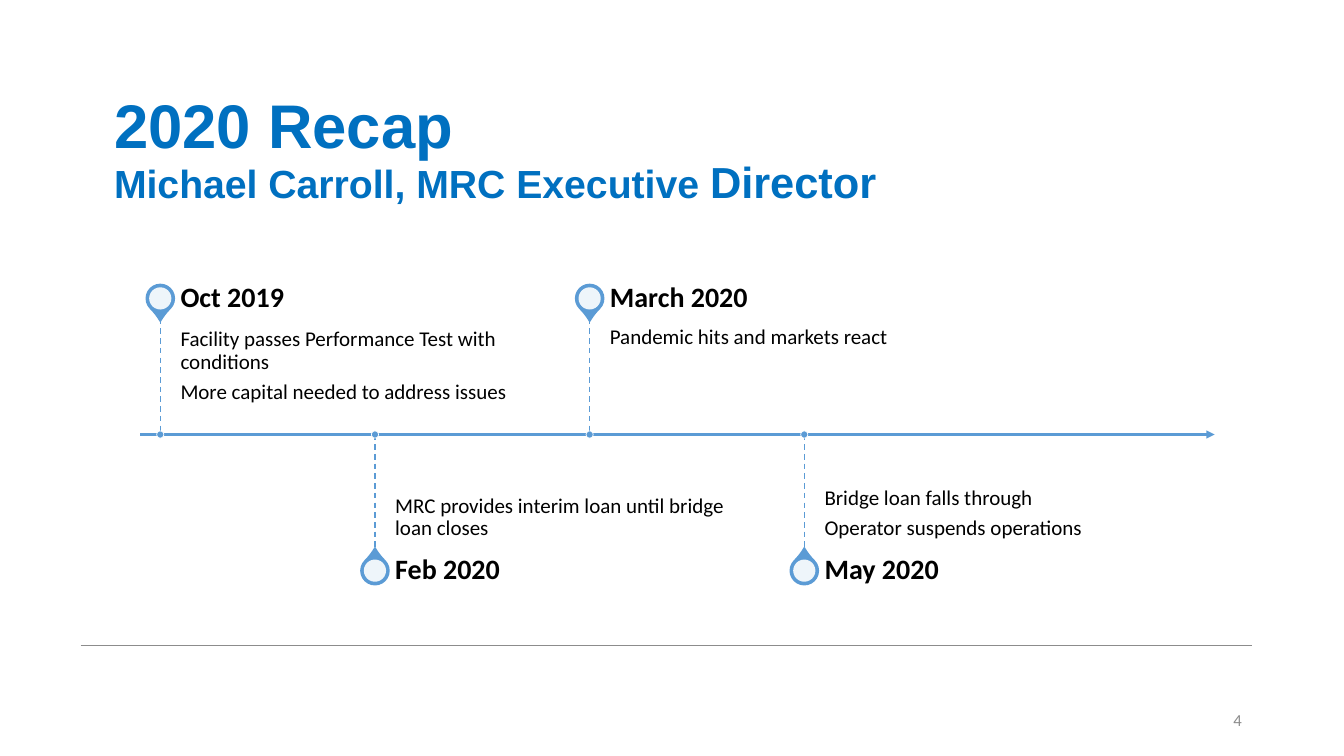
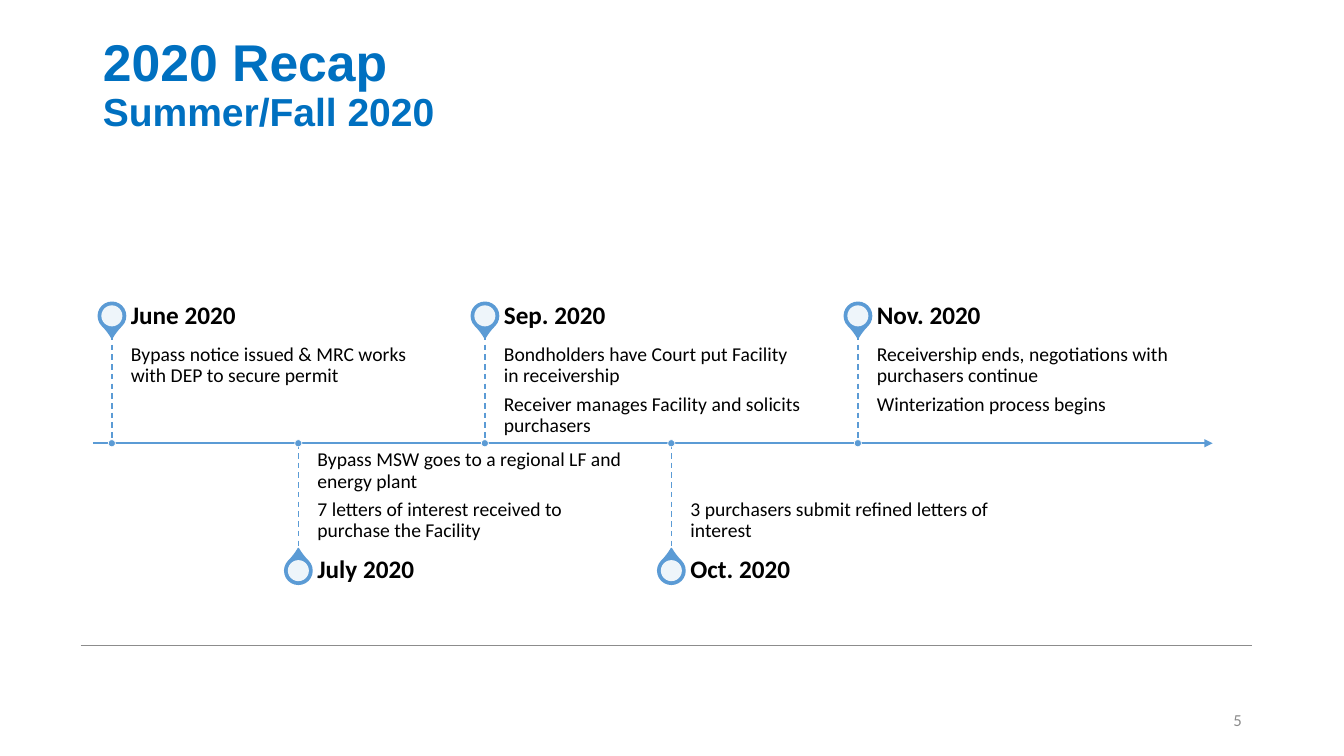
from dataclasses import dataclass
from typing import Any

from lxml import etree
from pptx import Presentation
from pptx import util as u
from pptx.dml.color import RGBColor
from pptx.enum import dml, shapes, text
from pptx.oxml import ns

Cm, Pt = u.Cm, u.Pt


# Theme shared by all slides
@dataclass(frozen=True)
class Theme:
    title_color: str = "0070C0"
    accent: str = "5B9BD5"
    body: str = "000000"
    muted: str = "8C8C8C"
    white: str = "FFFFFF"
    title_font: str = "Arial"
    body_font: str = "Calibri"
    number_size: float = 12
    line_spacing: float = 0.9
    paragraph_gap: float = 0.35  # share of the type size


THEME = Theme()


@dataclass(frozen=True)
class Run:
    words: str
    size: float


@dataclass(frozen=True)
class Event:
    date: str
    notes: tuple[str, ...]


@dataclass(frozen=True)
class Timeline:
    """Lengths in centimetres, type sizes in points."""
    left: float
    right: float
    axis: float
    first_stem: float
    step: float
    stem: float
    heading_height: float
    heading_right: float
    width: float
    text_gap: float
    pin: float
    hole: float
    axis_inset: float
    heading_size: float
    note_size: float


@dataclass(frozen=True)
class Page:
    number: int
    title_left: float
    title_top: float
    title_anchor: Any
    title: tuple[tuple[Run, ...], ...]
    timeline: Timeline
    events: tuple[Event, ...]


NOTE_INSET = 0.25
DOT = 0.18

PAGES = (
    Page(
        4, 2.62, 1.98, text.MSO_ANCHOR.MIDDLE,
        ((Run("2020 Recap", 44),),
         (Run("Michael Carroll, MRC Executive ", 28), Run("Director", 31))),
        Timeline(left=3.53, right=30.61, axis=10.95, first_stem=4.04, step=5.41,
                 stem=2.92, heading_height=1.02, heading_right=0.36, width=8.99,
                 text_gap=0.51, pin=0.71, hole=0.56, axis_inset=0.41,
                 heading_size=20, note_size=15),
        (Event("Oct 2019", ("Facility passes Performance Test with conditions",
                            "More capital needed to address issues")),
         Event("Feb 2020", ("MRC provides interim loan until bridge loan closes",)),
         Event("March 2020", ("Pandemic hits and markets react",)),
         Event("May 2020", ("Bridge loan falls through",
                            "Operator suspends operations"))),
    ),
    Page(
        5, 2.34, 0.94, text.MSO_ANCHOR.TOP,
        ((Run("2020 Recap", 36.9),), (Run("Summer/Fall 2020", 27.9),)),
        Timeline(left=2.34, right=30.56, axis=11.17, first_stem=2.82, step=4.7,
                 stem=2.73, heading_height=0.96, heading_right=0.3, width=7.82,
                 text_gap=0.48, pin=0.69, hole=0.53, axis_inset=0.38,
                 heading_size=18, note_size=14),
        (Event("June 2020", ("Bypass notice issued & MRC works with DEP to secure permit",)),
         Event("July 2020", ("Bypass MSW goes to a regional LF and energy plant",
                             "7 letters of interest received to purchase the Facility")),
         Event("Sep. 2020", ("Bondholders have Court put Facility in receivership",
                             "Receiver manages Facility and solicits purchasers")),
         Event("Oct. 2020", ("3 purchasers submit refined letters of interest",)),
         Event("Nov. 2020", ("Receivership ends, negotiations with purchasers continue",
                             "Winterization process begins"))),
    ),
)


# Drawing helpers
def assign(target: Any, values: dict[str, Any]) -> None:
    for name, value in values.items():
        setattr(target, name, value)


def set_font(font: Any, name: str, size: float, color: str, bold: bool = False) -> None:
    assign(font, {"name": name, "size": Pt(size), "bold": bold})
    font.color.rgb = RGBColor.from_string(color)


def add_line(slide: Any, start: tuple[float, float], end: tuple[float, float],
             color: str, width: float, dashed: bool = False, arrow: bool = False) -> None:
    connector = slide.shapes.add_connector(
        shapes.MSO_CONNECTOR.STRAIGHT, *map(Cm, start + end))
    connector.line.color.rgb = RGBColor.from_string(color)
    connector.line.width = Pt(width)
    if dashed:
        connector.line.dash_style = dml.MSO_LINE.DASH
    if arrow:
        tail = etree.SubElement(connector.line._get_or_add_ln(), ns.qn("a:tailEnd"))
        tail.set("type", "triangle")
    etree.SubElement(connector._element.spPr, ns.qn("a:effectLst"))


def add_centred(slide: Any, kind: Any, x: float, y: float, size: float, fill: str,
                line: str | None = None, line_width: float = 1) -> Any:
    shape = slide.shapes.add_shape(
        kind, Cm(x - size / 2), Cm(y - size / 2), Cm(size), Cm(size))
    shape.shadow.inherit = False
    shape.fill.solid()
    shape.fill.fore_color.rgb = RGBColor.from_string(fill)
    if line:
        shape.line.color.rgb = RGBColor.from_string(line)
        shape.line.width = Pt(line_width)
    else:
        shape.line.fill.background()
    return shape


def add_text(slide: Any, box: tuple[float, float, float, float], lines: tuple[str, ...],
             size: float, frame_format: dict[str, Any], color: str = THEME.body,
             bold: bool = False, align: Any = text.PP_ALIGN.LEFT) -> None:
    frame = slide.shapes.add_textbox(*map(Cm, box)).text_frame
    assign(frame, {"word_wrap": True, **frame_format})
    for index, words in enumerate(lines):
        paragraph = frame.add_paragraph() if index else frame.paragraphs[0]
        assign(paragraph, {"text": words, "alignment": align,
                           "line_spacing": THEME.line_spacing})
        if index < len(lines) - 1:
            paragraph.space_after = Pt(size * THEME.paragraph_gap)
        set_font(paragraph.runs[0].font, THEME.body_font, size, color, bold)


# Parts of a slide
def add_title(slide: Any, page: Page) -> None:
    title = slide.shapes.title
    assign(title, {"left": Cm(page.title_left), "top": Cm(page.title_top),
                   "width": Cm(29.21), "height": Cm(3.68)})
    frame = title.text_frame
    assign(frame, {"word_wrap": True, "auto_size": text.MSO_AUTO_SIZE.NONE,
                   "vertical_anchor": page.title_anchor,
                   "margin_top": 0, "margin_bottom": 0})
    paragraph = frame.paragraphs[0]
    assign(paragraph, {"alignment": text.PP_ALIGN.LEFT,
                       "line_spacing": THEME.line_spacing})
    for index, line in enumerate(page.title):
        if index:
            paragraph.add_line_break()
        for part in line:
            run = paragraph.add_run()
            run.text = part.words
            set_font(run.font, THEME.title_font, part.size, THEME.title_color, True)


def add_footer(slide: Any, number: int) -> None:
    add_line(slide, (2.03, 16.26), (31.55, 16.26), THEME.muted, 0.5)
    add_text(slide, (23.93, 17.65, 7.62, 1.02), (str(number),), THEME.number_size,
             {"vertical_anchor": text.MSO_ANCHOR.MIDDLE}, THEME.muted,
             align=text.PP_ALIGN.RIGHT)


def add_pin(slide: Any, x: float, y: float, timeline: Timeline, above: bool) -> None:
    drop = add_centred(slide, shapes.MSO_SHAPE.TEAR, x, y, timeline.pin,
                       THEME.accent, THEME.accent)
    drop.adjustments[0] = 1.15
    drop.rotation = 135 if above else 315
    hole = add_centred(slide, shapes.MSO_SHAPE.OVAL, x, y, timeline.hole, THEME.white)
    color = hole._element.spPr.find(ns.qn("a:solidFill"))[0]
    etree.SubElement(color, ns.qn("a:alpha")).set("val", "90000")


def add_event(slide: Any, event: Event, x: float, timeline: Timeline, above: bool) -> None:
    side = -1 if above else 1
    stem_end = timeline.axis + side * timeline.stem
    heading_middle = stem_end + side * timeline.heading_height / 2
    text_left = x + timeline.text_gap
    add_pin(slide, x, heading_middle, timeline, above)

    # Notes lie between heading and axis, the heading beside the pin
    top_inset, bottom_inset = NOTE_INSET, timeline.axis_inset
    if not above:
        top_inset, bottom_inset = bottom_inset, top_inset
    add_text(slide, (text_left, min(stem_end, timeline.axis), timeline.width, timeline.stem),
             event.notes, timeline.note_size,
             {"vertical_anchor": text.MSO_ANCHOR.TOP if above else text.MSO_ANCHOR.BOTTOM,
              "margin_left": 0, "margin_right": Cm(NOTE_INSET if above else 0),
              "margin_top": Cm(top_inset), "margin_bottom": Cm(bottom_inset)})
    add_text(slide, (text_left, heading_middle - timeline.heading_height / 2,
                     timeline.width, timeline.heading_height),
             (event.date,), timeline.heading_size,
             {"vertical_anchor": text.MSO_ANCHOR.MIDDLE, "margin_left": 0,
              "margin_right": Cm(timeline.heading_right),
              "margin_top": 0, "margin_bottom": 0}, bold=True)

    # Stem and its dot on the axis
    ends = sorted((stem_end, timeline.axis))
    add_line(slide, (x, ends[0]), (x, ends[1]), THEME.accent, 1, dashed=True)
    add_centred(slide, shapes.MSO_SHAPE.OVAL, x, timeline.axis, DOT,
                THEME.accent, THEME.white, 0.5)


def add_timeline(slide: Any, timeline: Timeline, events: tuple[Event, ...]) -> None:
    add_line(slide, (timeline.left, timeline.axis), (timeline.right, timeline.axis),
             THEME.accent, 1.5, arrow=True)
    for index, event in enumerate(events):
        add_event(slide, event, timeline.first_stem + index * timeline.step,
                  timeline, above=index % 2 == 0)


def main() -> None:
    presentation = Presentation()
    assign(presentation, {"slide_width": Cm(33.87), "slide_height": Cm(19.05)})
    title_only = presentation.slide_layouts[5]
    for page in PAGES:
        slide = presentation.slides.add_slide(title_only)
        add_title(slide, page)
        add_footer(slide, page.number)
        add_timeline(slide, page.timeline, page.events)
    presentation.save("out.pptx")


if __name__ == "__main__":
    main()
